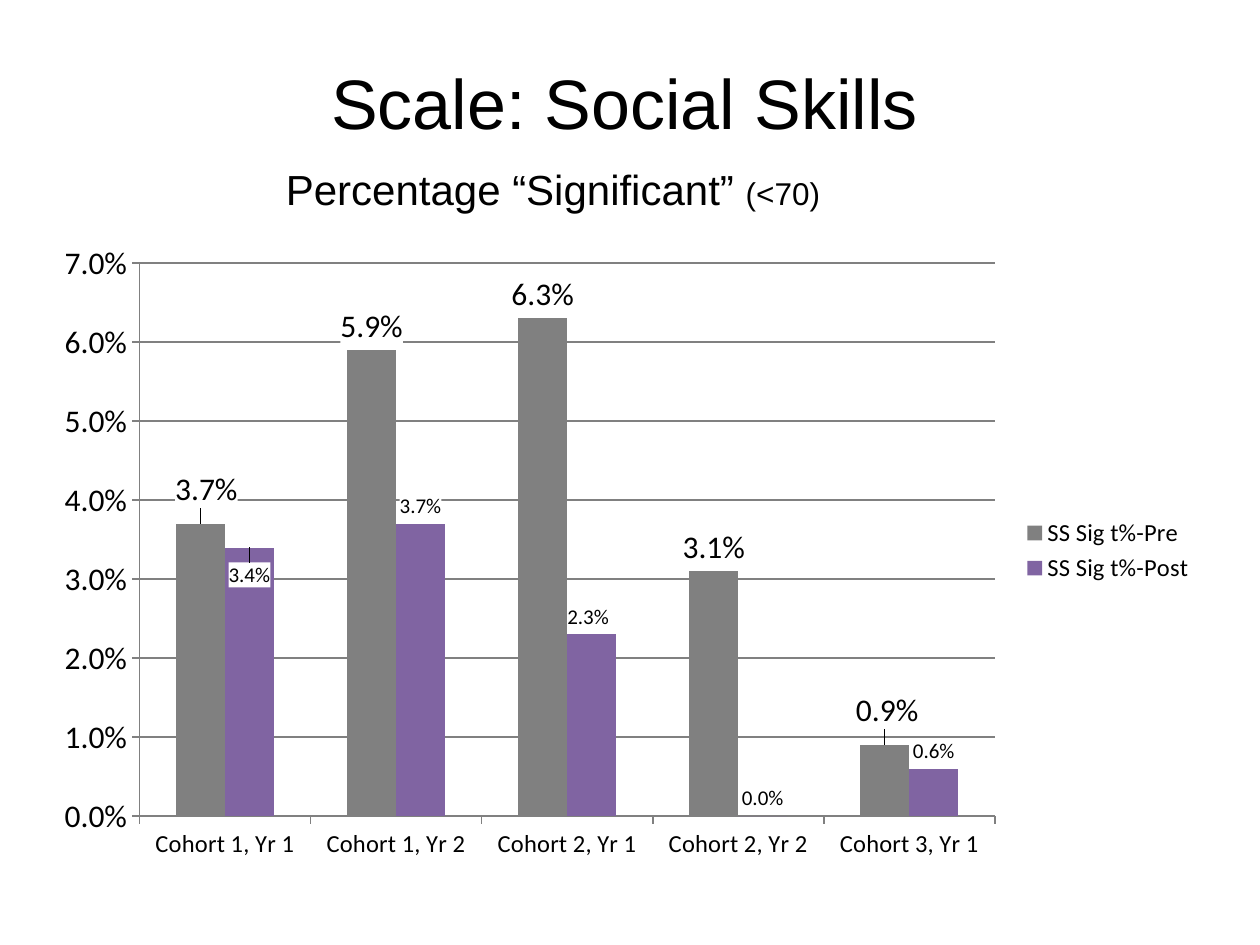
from lxml import etree
from pptx import Presentation
from pptx.chart.data import CategoryChartData
from pptx.dml.color import RGBColor
from pptx.enum.chart import XL_CHART_TYPE, XL_LABEL_POSITION, XL_LEGEND_POSITION, XL_TICK_MARK
from pptx.oxml import parse_xml
from pptx.oxml.ns import nsdecls, qn
from pptx.util import Inches, Pt

BLACK, GRAY, PURPLE = "000000", "808080", "8064A2"
PERCENT = "0.0%"


def color(hex_code):
    return RGBColor.from_string(hex_code)


def manual_layout(inner=False, **fractions):
    """Return a c:layout element; fractions are parts of the chart's size."""
    layout = etree.Element(qn("c:layout"))
    manual = etree.SubElement(layout, qn("c:manualLayout"))
    settings = {"layoutTarget": "inner", "xMode": "edge", "yMode": "edge"} if inner else {}
    for tag, value in {**settings, **fractions}.items():
        etree.SubElement(manual, qn(f"c:{tag}")).set("val", str(value))
    return layout


prs = Presentation()
prs.slide_width, prs.slide_height = Inches(10), Inches(7.5)
slide = prs.slides.add_slide(prs.slide_layouts[6])

# Headings
headings = [
    ((2.53, 0.42, 5.03, 0.77), [("Scale: Social Skills", 40)]),
    ((2.17, 1.25, 4.49, 0.5), [("Percentage “Significant” ", 24), ("(<70)", 18)]),
]
for place, pieces in headings:
    heading = slide.shapes.add_textbox(*map(Inches, place)).text_frame
    heading.word_wrap = False
    for words, size in pieces:
        run = heading.paragraphs[0].add_run()
        run.text = words
        run.font.name, run.font.size = "Arial", Pt(size)
        run.font.color.rgb = color(BLACK)

# Chart
scores = CategoryChartData(number_format=PERCENT)
scores.categories = ["Cohort 1, Yr 1", "Cohort 1, Yr 2", "Cohort 2, Yr 1",
                     "Cohort 2, Yr 2", "Cohort 3, Yr 1"]
scores.add_series("SS Sig t%-Pre", [0.037, 0.059, 0.063, 0.031, 0.009])
scores.add_series("SS Sig t%-Post", [0.034, 0.037, 0.023, 0, 0.006])
chart = slide.shapes.add_chart(
    XL_CHART_TYPE.COLUMN_CLUSTERED,
    Inches(0.33), Inches(1.83), Inches(9.25), Inches(5.08), scores).chart
chart.has_title = False
chart.font.name, chart.font.size = "Calibri", Pt(18)
chart.font.color.rgb = color(BLACK)

chart.has_legend = True
chart.legend.position = XL_LEGEND_POSITION.RIGHT
chart.legend.include_in_layout = False
chart.legend.font.size = Pt(14)

# Axes
cohort_axis, percent_axis = chart.category_axis, chart.value_axis
cohort_axis.tick_labels.font.size = Pt(14)
percent_axis.minimum_scale, percent_axis.maximum_scale = 0, 0.07
percent_axis.major_unit = 0.01
percent_axis.tick_labels.number_format = PERCENT
percent_axis.tick_labels.number_format_is_linked = False
percent_axis.has_major_gridlines = True
for axis in (cohort_axis, percent_axis):
    axis.major_tick_mark = XL_TICK_MARK.OUTSIDE
for lined in (cohort_axis, percent_axis, percent_axis.major_gridlines):
    lined.format.line.color.rgb = color(GRAY)
    lined.format.line.width = Pt(1)

plot = chart.plots[0]
plot.gap_width, plot.overlap, plot.vary_by_categories = 150, 0, False
plot_area = chart.element.find(f".//{qn('c:plotArea')}")
for automatic in plot_area.findall(qn("c:layout")):
    plot_area.remove(automatic)
plot_area.insert(0, manual_layout(inner=True, x=0.084, y=0.051, w=0.734, h=0.864))

# Columns and their labels; some labels are shifted from the default place
series_styles = [
    (GRAY, 18, {0: (0.005, -0.017), 4: (0.002, -0.017)}),
    (PURPLE, 12, {0: (0, 0.07), 2: (-0.003, 0)}),
]
for series, (fill, label_size, shifts) in zip(plot.series, series_styles):
    series.format.fill.solid()
    series.format.fill.fore_color.rgb = color(fill)
    series.invert_if_negative = False
    labels = series.data_labels
    labels.show_value = True
    labels.number_format, labels.number_format_is_linked = PERCENT, False
    labels.position = XL_LABEL_POSITION.OUTSIDE_END
    fonts = [labels.font]
    for index in shifts:
        label = series.points[index].data_label
        label.position = XL_LABEL_POSITION.OUTSIDE_END
        fonts.append(label.font)
    for font in fonts:
        font.name, font.size = "Calibri", Pt(label_size)
        font.color.rgb = color(BLACK)

    label_group = labels._element
    shifted_labels = label_group.findall(qn("c:dLbl"))
    for shifted, (dx, dy) in zip(shifted_labels, shifts.values()):
        shifted.insert(1, manual_layout(x=dx, y=dy))
    for labelled in (label_group, *shifted_labels):
        for old_fill in labelled.findall(qn("c:spPr")):
            labelled.remove(old_fill)
        labelled.find(qn("c:txPr")).addprevious(parse_xml(
            f'<c:spPr {nsdecls("c", "a")}><a:solidFill><a:srgbClr val="FFFFFF"/>'
            "</a:solidFill></c:spPr>"))
    # Shifted labels get no leader lines
    label_group.append(parse_xml(
        f'<c:extLst {nsdecls("c")}><c:ext uri="{{CE6537A1-D6FC-4f65-9D91-7224C49458BB}}" '
        'xmlns:c15="http://schemas.microsoft.com/office/drawing/2012/chart">'
        '<c15:showLeaderLines val="0"/></c:ext></c:extLst>'))

prs.save("out.pptx")
